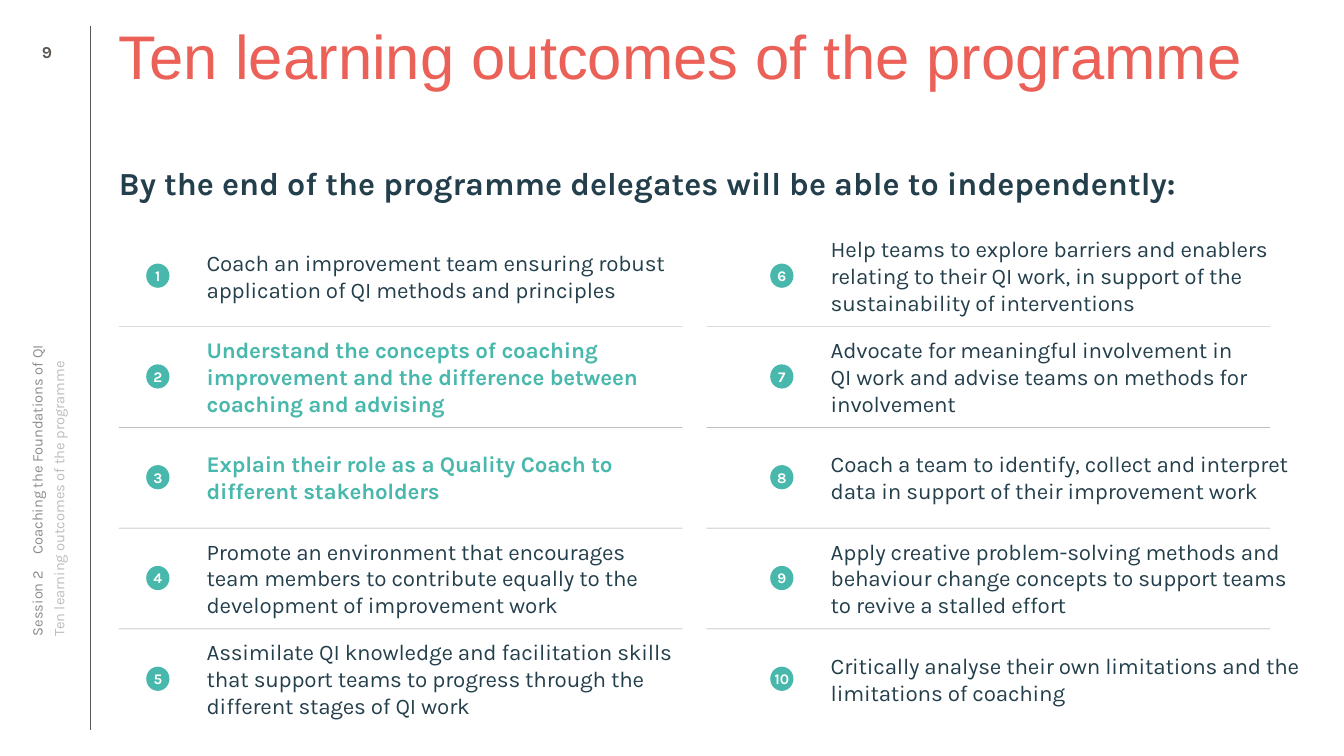
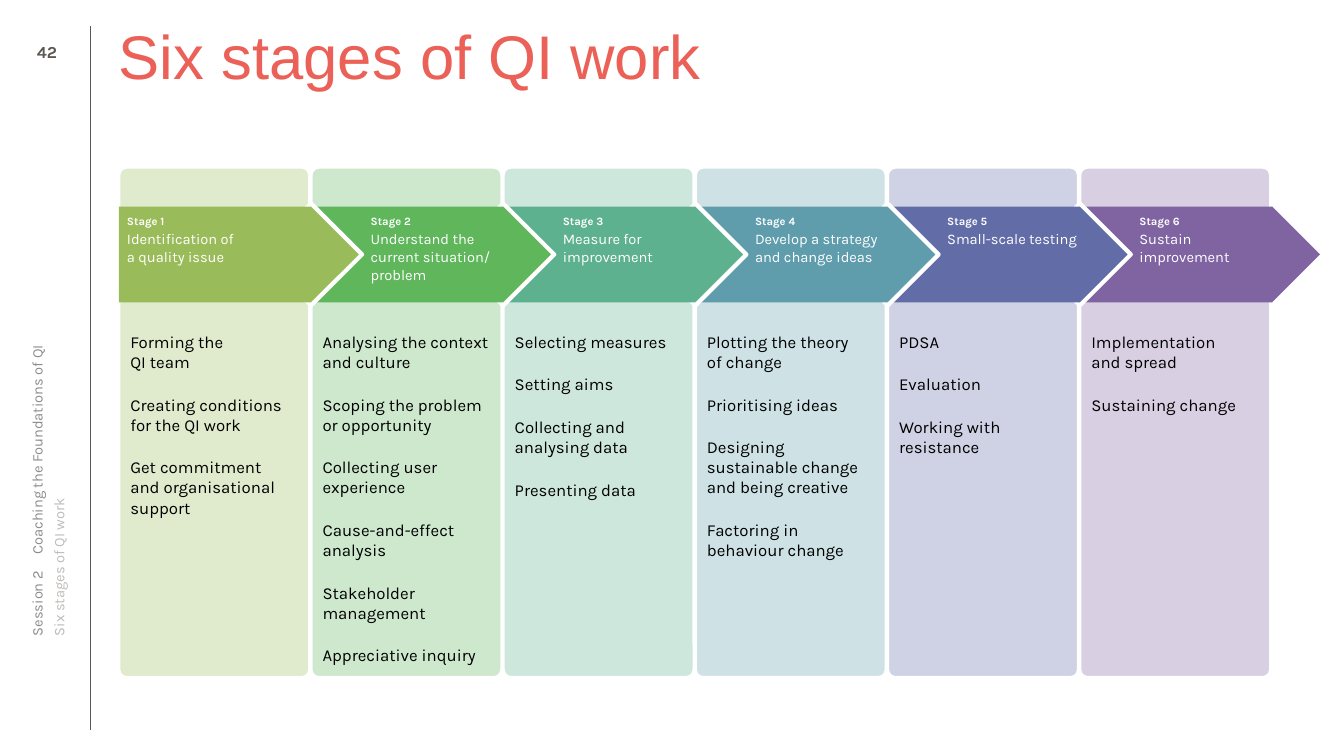
from copy import deepcopy
from dataclasses import dataclass

from lxml import etree
from pptx import Presentation
from pptx.dml.color import RGBColor
from pptx.enum import shapes, text
from pptx.oxml import ns
from pptx.util import Inches, Pt

MIDDLE = text.MSO_ANCHOR.MIDDLE
CENTER = text.PP_ALIGN.CENTER
SHAPE = shapes.MSO_SHAPE


@dataclass(frozen=True)
class Style:
    size: float
    color: str
    bold: bool = False
    font: str = "Karla"
    tracking: int = 0
    spacing: float = 1.0
    after: float = 0


class Theme:
    """Colours and type sizes shared by every slide."""
    ink, teal, rule, white = "243F4C", "49B8AC", "5C5753", "FFFFFF"
    stages = ["9ABB59", "5FB65B", "5DB18E", "5F9DAC", "626DA7", "8064A2"]
    title = Style(44, "EB6057", font="Arial", spacing=0.9)
    lead = Style(23, ink, bold=True, spacing=0.9)
    outcome = Style(16, ink, tracking=-10)
    focus = Style(16, teal, bold=True, tracking=-10)
    badge = Style(10.5, white, bold=True)
    number = Style(12, rule, bold=True)
    session = Style(10.5, "8C8C8C")
    topic = Style(10.5, "BFBCB9", spacing=0.9)
    stage_tag = Style(8, white, bold=True, after=1.5)
    stage_name = Style(10.5, white, after=1.5)
    activity = Style(12, "000000", after=16)


# Shares of the slide's width (x) and height (y), in percent
LEFT, TOP, BODY_TOP, CONTENT_WIDTH = 8.85, 3.47, 22.13, 89.18


class Deck:
    def __init__(self):
        self.deck = Presentation()
        self.deck.slide_width, self.deck.slide_height = Inches(13.33), Inches(7.5)
        self.page = None

    def x(self, share):
        return round(self.deck.slide_width * share / 100)

    def y(self, share):
        return round(self.deck.slide_height * share / 100)

    def place(self, at):
        left, top, width, height = at
        return self.x(left), self.y(top), self.x(width), self.y(height)

    # Text
    def set_text(self, box, lines, inset=(0, 0, 0, 0), anchor=text.MSO_ANCHOR.TOP,
                 align=text.PP_ALIGN.LEFT, wrap=True):
        """Fill a box with (wording, style) pairs, one paragraph each."""
        frame = box.text_frame
        frame.margin_left, frame.margin_right = self.x(inset[0]), self.x(inset[2])
        frame.margin_top, frame.margin_bottom = self.y(inset[1]), self.y(inset[3])
        frame.word_wrap, frame.vertical_anchor = wrap, anchor
        frame.text = "\n".join(wording for wording, _ in lines)
        for para, (_, style) in zip(frame.paragraphs, lines):
            para.alignment = align
            para.line_spacing = style.spacing
            para.space_after = Pt(style.after)
            for span in para.runs:
                span.font.name, span.font.size = style.font, Pt(style.size)
                span.font.bold = style.bold
                span.font.color.rgb = RGBColor.from_string(style.color)
                if style.tracking:
                    span.font._element.set("spc", str(style.tracking))
            # Line breaks take the size of the words around them
            for line_break in para._p.findall(ns.qn("a:br")):
                line_break.append(deepcopy(para.runs[0].font._element))

    def text(self, at, lines, **layout):
        box = self.page.shapes.add_textbox(*self.place(at))
        self.set_text(box, lines, **layout)
        return box

    # Shapes and lines
    def fade(self, fill, opacity):
        color = fill._xPr.find(".//" + ns.qn("a:srgbClr"))
        etree.SubElement(color, ns.qn("a:alpha"), val=str(opacity * 1000))

    def shape(self, kind, at, color, outline=0, opacity=100):
        shape = self.page.shapes.add_shape(kind, *self.place(at))
        shape.shadow.inherit = False
        shape.fill.solid()
        shape.fill.fore_color.rgb = RGBColor.from_string(color)
        if opacity < 100:
            self.fade(shape.fill, opacity)
        if outline:
            shape.line.color.rgb = RGBColor.from_string(Theme.white)
            shape.line.width = Pt(outline)
        else:
            shape.line.fill.background()
        return shape

    def rule(self, x1, y1, x2, y2, opacity=100):
        line = self.page.shapes.add_connector(
            shapes.MSO_CONNECTOR.STRAIGHT, self.x(x1), self.y(y1), self.x(x2), self.y(y2))
        line.line.color.rgb = RGBColor.from_string(Theme.rule)
        line.line.width = Pt(0.25)
        if opacity < 100:
            self.fade(line.line.fill, opacity)
        etree.SubElement(line._element.spPr, ns.qn("a:effectLst"))

    # Frame shared by all slides
    def side_label(self, center, thickness, wording, style):
        length = 34.88
        at = center - length / 2, 53.13 - thickness / 2, length, thickness
        box = self.text(at, [(wording, style)], anchor=MIDDLE)
        box.rotation = 270
        return box

    def new_page(self, number, title):
        self.page = self.deck.slides.add_slide(self.deck.slide_layouts[6])
        self.rule(6.68, 100 - TOP, 6.68, TOP)
        self.text((LEFT, TOP, CONTENT_WIDTH, 16.67), [(title, Theme.title)])
        self.text((1.95, TOP, 3.08, 6.8), [(str(number), Theme.number)],
                  anchor=MIDDLE, align=CENTER)
        session = self.side_label(2.74, 2.67, "Session 2\tCoaching the Foundations of QI",
                                  Theme.session)
        properties = session.text_frame.paragraphs[0]._p.get_or_add_pPr()
        tabs = etree.SubElement(properties, ns.qn("a:tabLst"))
        etree.SubElement(tabs, ns.qn("a:tab"), pos=str(Inches(0.81)), algn="l")
        self.side_label(4.43, 2, title, Theme.topic)

    # Parts of the slides
    def outcome(self, column, row, number, wording, style):
        left, top, height = LEFT + column * 46.43, 29.87 + row * 13.33, 13.2
        self.text((left, top, 42.68, height), [(wording, style)],
                  inset=(6.53, 0, 0.75, 0), anchor=MIDDLE)
        badge = self.shape(SHAPE.OVAL, (left + 2.03, top + 5, 1.73, 3.2), Theme.teal)
        self.set_text(badge, [(str(number), Theme.badge)],
                      anchor=MIDDLE, align=CENTER, wrap=False)

    def stage_panel(self, left, color, activities):
        panel = self.shape(SHAPE.ROUNDED_RECTANGLE, (left, BODY_TOP, 14.18, 67.47),
                           color, outline=2, opacity=30)
        panel.adjustments[0] = 0.04
        self.text((left + 0.1, 43.87, 14.1, 45.2),
                  [(activity, Theme.activity) for activity in activities],
                  inset=(0.75, 0, 0.75, 0.67))

    def stage_arrow(self, left, width, color, tag, name, first, last):
        top, height = 27.33, 12.67
        tip_width, tip_height = (7.13, height) if last else (7.58, 13.47)
        self.shape(SHAPE.DIAMOND,
                   (left + width - tip_width / 2, top + (height - tip_height) / 2,
                    tip_width, tip_height), color, outline=0 if last else 3)
        band = self.shape(SHAPE.RECTANGLE, (left, top, width, height), color)
        self.set_text(band, [(tag, Theme.stage_tag), (name, Theme.stage_name)],
                      inset=(0.6 if first else 4.43, 1.07, 0, 0.53))


OUTCOMES = [
    "Coach an improvement team ensuring robust application of QI methods and principles",
    "Understand the concepts of coaching improvement and the difference between "
    "coaching and advising",
    "Explain their role as a Quality Coach to different stakeholders",
    "Promote an environment that encourages team members to contribute equally to "
    "the development of improvement work",
    "Assimilate QI knowledge and facilitation skills that support teams to progress "
    "through the different stages of QI work",
    "Help teams to explore barriers and enablers relating to their QI work, in support "
    "of the sustainability of interventions",
    "Advocate for meaningful involvement in\vQI work and advise teams on methods "
    "for involvement",
    "Coach a team to identify, collect and interpret data in support of their "
    "improvement work",
    "Apply creative problem-solving methods and behaviour change concepts to support "
    "teams to revive a stalled effort",
    "Critically analyse their own limitations and the limitations of coaching",
]
FOCUS = {2, 3}
ROWS = 5

STAGES = [
    ("Identification of\va quality issue",
     ["Forming the\vQI team", "Creating conditions for the QI work",
      "Get commitment\vand organisational support"]),
    ("Understand the current situation/\vproblem",
     ["Analysing the context and culture", "Scoping the problem or opportunity",
      "Collecting user experience", "Cause-and-effect analysis",
      "Stakeholder management", "Appreciative inquiry"]),
    ("Measure for\vimprovement",
     ["Selecting measures", "Setting aims", "Collecting and analysing data",
      "Presenting data"]),
    ("Develop a strategy\vand change ideas",
     ["Plotting the theory\vof change", "Prioritising ideas",
      "Designing sustainable change and being creative",
      "Factoring in behaviour change"]),
    ("Small-scale testing", ["PDSA", "Evaluation", "Working with resistance"]),
    ("Sustain improvement", ["Implementation\vand spread", "Sustaining change"]),
]


def outcomes_page(deck):
    deck.new_page(9, "Ten learning outcomes of the programme")
    deck.text((LEFT, BODY_TOP, CONTENT_WIDTH, 6),
              [("By the end of the programme delegates will be able to independently:",
                Theme.lead)])
    for index, wording in enumerate(OUTCOMES):
        column, row = divmod(index, ROWS)
        number = index + 1
        deck.outcome(column, row, number, wording,
                     Theme.focus if number in FOCUS else Theme.outcome)
        if row:
            left, top = LEFT + column * 43.73, 29.87 + row * 13.33
            deck.rule(left, top, left + 41.93, top, opacity=60)


def stages_page(deck):
    deck.new_page(42, "Six stages of QI work")
    pitch = 14.3
    last = len(STAGES) - 1
    for index, (_, activities) in enumerate(STAGES):
        deck.stage_panel(LEFT + index * pitch, Theme.stages[index], activities)
    # Each arrow overlaps the one to its right, so work from right to left
    for index in range(last, -1, -1):
        deck.stage_arrow(LEFT + index * pitch, pitch, Theme.stages[index],
                         f"Stage {index + 1}", STAGES[index][0],
                         first=index == 0, last=index == last)


def main():
    deck = Deck()
    outcomes_page(deck)
    stages_page(deck)
    deck.deck.save("out.pptx")


if __name__ == "__main__":
    main()
